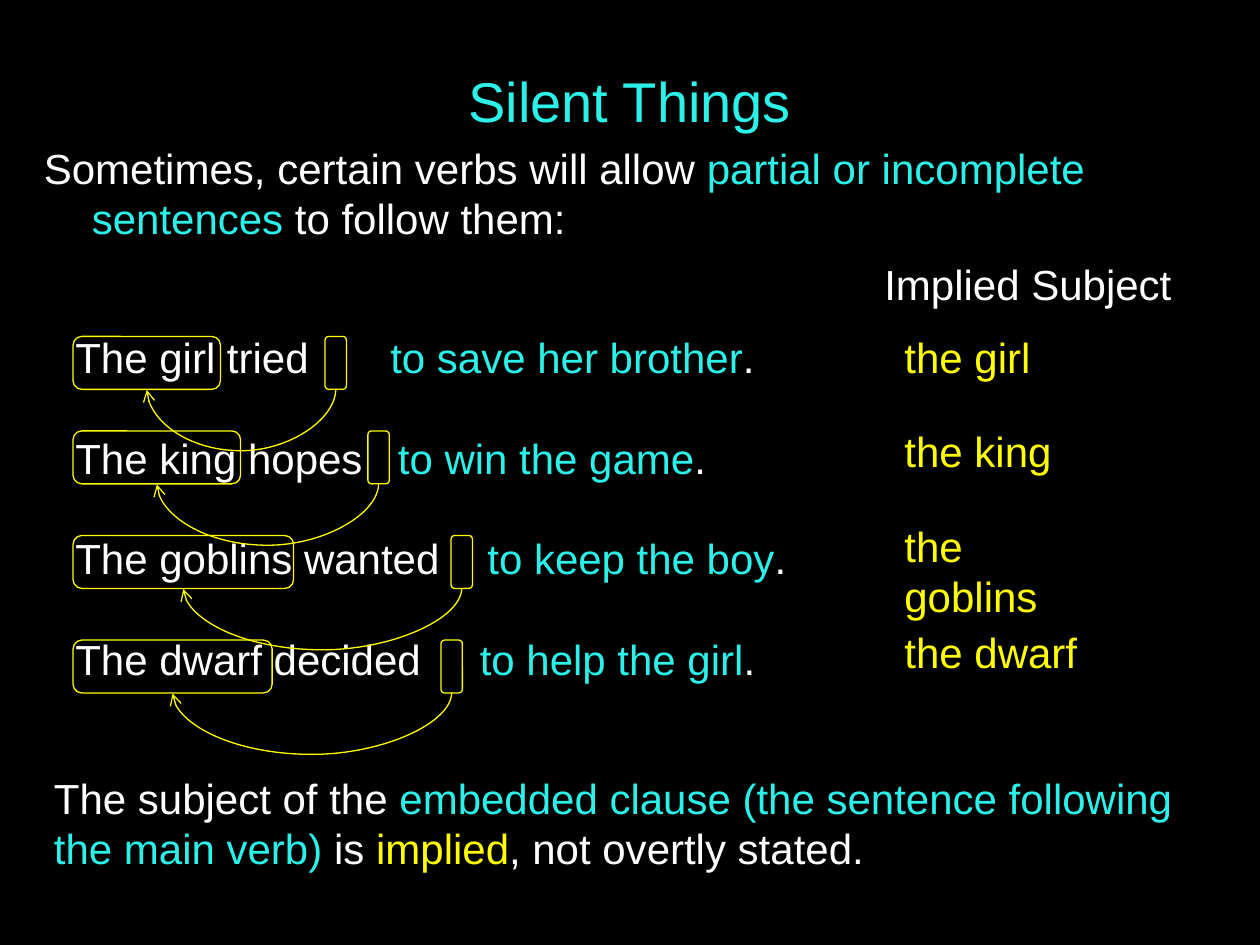
from dataclasses import dataclass

from lxml.etree import SubElement
from pptx import Presentation
from pptx.dml.color import RGBColor
from pptx.enum.shapes import MSO_CONNECTOR, MSO_SHAPE
from pptx.enum.text import MSO_ANCHOR, PP_ALIGN
from pptx.oxml.ns import qn
from pptx.util import Inches, Pt


@dataclass(frozen=True)
class Theme:
    font: str = "Arial"
    title_size: int = 32
    text_size: int = 24
    leading: float = 1.2
    outline: float = 0.75
    background: RGBColor = RGBColor(0x00, 0x00, 0x00)
    plain: RGBColor = RGBColor(0xFF, 0xFF, 0xFF)
    clause: RGBColor = RGBColor(0x2C, 0xF1, 0xE9)
    implied: RGBColor = RGBColor(0xFF, 0xFF, 0x00)


THEME = Theme()


@dataclass(frozen=True)
class Example:
    subject: str
    verb: str
    clause: str
    clause_tab: float
    top: float
    subject_width: float
    gap_left: float
    answer: str
    answer_top: float


EXAMPLES = [
    Example("The girl", "tried", "to save her brother", 2.5, 2.67, 1.17, 2.58, "the girl", 2.58),
    Example("The king", "hopes", "to win the game", 2.56, 3.42, 1.33, 2.92, "the king", 3.33),
    Example("The goblins", "wanted", "to keep the boy", 3.27, 4.25, 1.75, 3.58, "the goblins", 4.08),
    Example("The dwarf", "decided", "to help the girl", 3.21, 5.08, 1.58, 3.5, "the dwarf", 4.92),
]
SUBJECT_LEFT = 0.58
GAP_WIDTH = 0.17
BOX_HEIGHT = 0.42
ARC_DEPTH = 0.5
ARC_DROP = 0.01


def add_text_frame(slide, left, top, width, height, wrap=True):
    frame = slide.shapes.add_textbox(
        Inches(left), Inches(top), Inches(width), Inches(height)).text_frame
    frame.word_wrap = wrap
    return frame


def write(paragraph, pieces, size=THEME.text_size):
    """Fill a paragraph with (text, colour) pieces."""
    paragraph.line_spacing = Pt(size * THEME.leading)
    paragraph.font.name = THEME.font
    paragraph.font.size = Pt(size)
    for words, colour in pieces:
        run = paragraph.add_run()
        run.text = words
        run.font.color.rgb = colour


def add_label(slide, words, colour, left, top, width):
    frame = add_text_frame(slide, left, top, width, 0.5, wrap=False)
    write(frame.paragraphs[0], [(words, colour)])


def add_title(slide):
    frame = add_text_frame(slide, 0.75, 0.17, 8.5, 1.25)
    frame.vertical_anchor = MSO_ANCHOR.MIDDLE
    title = frame.paragraphs[0]
    title.alignment = PP_ALIGN.CENTER
    write(title, [("Silent Things", THEME.clause)], THEME.title_size)


def add_introduction(slide):
    introduction = add_text_frame(slide, 0.25, 1.08, 9.75, 1.83).paragraphs[0]
    properties = introduction._p.get_or_add_pPr()
    properties.set("marL", str(Inches(0.38)))
    properties.set("indent", str(Inches(-0.38)))
    write(introduction, [
        ("Sometimes, certain verbs will allow ", THEME.plain),
        ("partial or incomplete sentences", THEME.clause),
        (" to follow them:", THEME.plain),
    ])


def add_sentences(slide):
    frame = add_text_frame(slide, 0.5, 2.58, 8.33, 2.9)
    for index, example in enumerate(EXAMPLES):
        sentence = frame.add_paragraph() if index else frame.paragraphs[0]
        if example is not EXAMPLES[-1]:
            sentence.space_after = Pt(THEME.text_size * THEME.leading)
        tabs = SubElement(sentence._p.get_or_add_pPr(), qn("a:tabLst"))
        SubElement(tabs, qn("a:tab"), pos=str(Inches(example.clause_tab)), algn="l")
        write(sentence, [
            (f"{example.subject} {example.verb}", THEME.plain),
            (f"\t{example.clause}", THEME.clause),
            (".", THEME.plain),
        ])


def add_conclusion(slide):
    frame = add_text_frame(slide, 0.33, 6.08, 9.17, 0.9)
    write(frame.paragraphs[0], [
        ("The subject of the ", THEME.plain),
        ("embedded clause (the sentence following the main verb) ", THEME.clause),
        ("is ", THEME.plain),
        ("implied", THEME.implied),
        (", not overtly stated.", THEME.plain),
    ])


def add_outline(slide, left, top, width):
    box = slide.shapes.add_shape(
        MSO_SHAPE.ROUNDED_RECTANGLE,
        Inches(left), Inches(top), Inches(width), Inches(BOX_HEIGHT))
    box.shadow.inherit = False
    box.fill.background()
    box.line.color.rgb = THEME.implied
    box.line.width = Pt(THEME.outline)


def add_arc(slide, start_x, end_x, y):
    """Hang a curved arrow below y: an upright connector turned by 90 degrees."""
    middle = (start_x + end_x) / 2
    half_span = (start_x - end_x) / 2
    arc = slide.shapes.add_connector(
        MSO_CONNECTOR.CURVE,
        Inches(middle - ARC_DROP / 2), Inches(y - half_span),
        Inches(middle + ARC_DROP / 2), Inches(y + half_span))
    arc.line.color.rgb = THEME.implied
    arc.line.width = Pt(THEME.outline)
    properties = arc._element.spPr
    properties.find(qn("a:xfrm")).set("rot", str(90 * 60000))
    guides = properties.find(qn("a:prstGeom")).get_or_add_avLst()
    bend = round(ARC_DEPTH / ARC_DROP * 100000)
    SubElement(guides, qn("a:gd"), name="adj1", fmla=f"val {bend}")
    SubElement(properties.find(qn("a:ln")), qn("a:tailEnd"), type="arrow")
    SubElement(properties, qn("a:effectLst"))


def add_link(slide, example):
    """Box the subject and the silent gap, and point from the gap to the subject."""
    add_outline(slide, example.gap_left, example.top, GAP_WIDTH)
    add_outline(slide, SUBJECT_LEFT, example.top, example.subject_width)
    add_arc(slide, example.gap_left + GAP_WIDTH / 2,
            SUBJECT_LEFT + example.subject_width / 2, example.top + BOX_HEIGHT)


def main():
    deck = Presentation()
    deck.slide_width, deck.slide_height = Inches(10), Inches(7.5)
    slide = deck.slides.add_slide(deck.slide_layouts[6])
    slide.background.fill.solid()
    slide.background.fill.fore_color.rgb = THEME.background

    add_title(slide)
    add_introduction(slide)
    add_sentences(slide)
    add_conclusion(slide)
    add_label(slide, "Implied Subject", THEME.plain, 6.92, 2, 2.48)
    for example in EXAMPLES:
        add_label(slide, example.answer, THEME.implied, 7.08, example.answer_top, 1.8)
        add_link(slide, example)
    deck.save("out.pptx")


if __name__ == "__main__":
    main()
